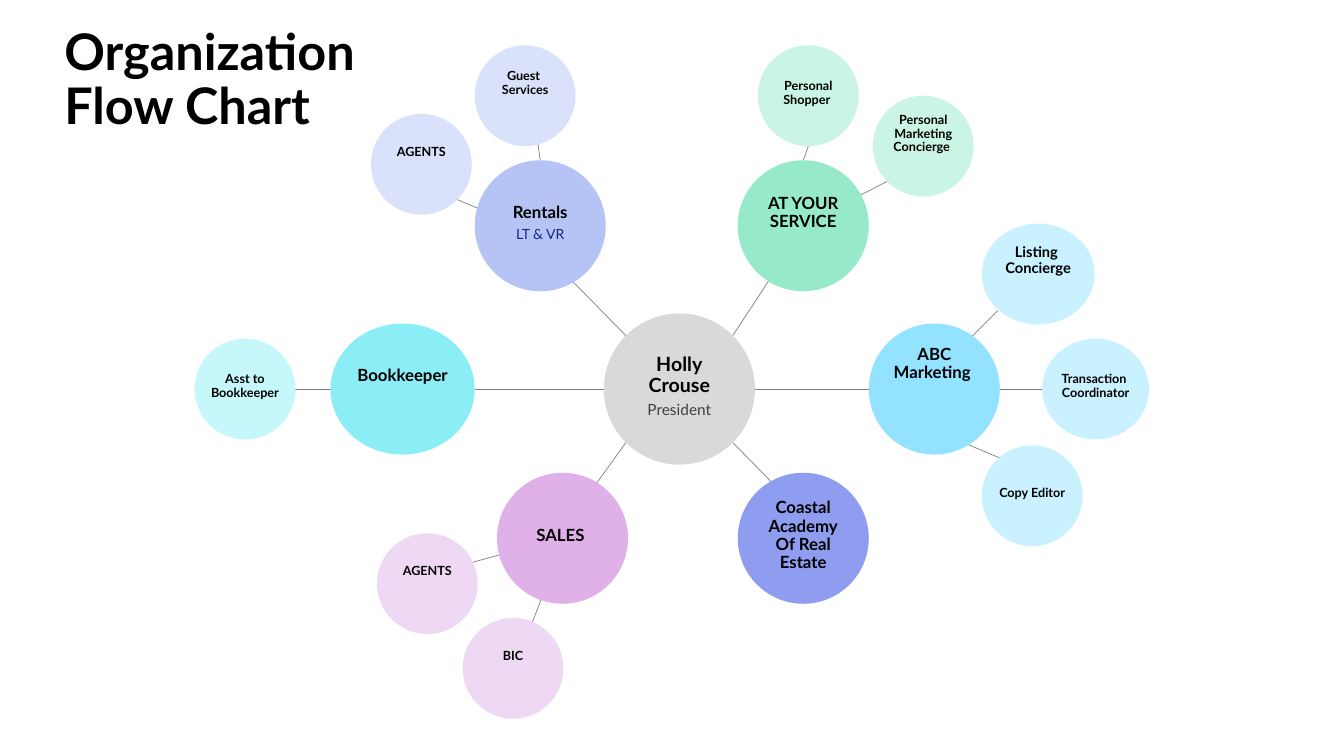
import pptx
import pptx.util
import pptx.dml.color
import pptx.enum.shapes
import pptx.enum.text
import pptx.oxml.ns
import lxml.etree

Pt = pptx.util.Pt

COLOURS = {
    "ink": "000000", "line": "808080", "role": "404040", "rental_note": "132A84",
    "president": "D9D9D9",
    "sales": "E0B1E9", "sales_team": "EFD8F4",
    "rentals": "B6C3F5", "rentals_team": "DAE1FA",
    "service": "96EACA", "service_team": "CAF5E5",
    "books": "8BEEF6", "books_team": "C5F7FB",
    "academy": "8E9DEF",
    "marketing": "93E2FF", "marketing_team": "C9F1FF",
}
FONT = "Lato"
HUB, BRANCH, TEAM = 108, 93.6, 72
MIDDLE = 277.9
BASE_INSET = 4.3

TITLE = "Organization\nFlow Chart"

# (from x, from y, to x, to y)
LINKS = [
    (447.1, 239.8, 406.1, 198), (523.4, 239.8, 552.2, 195.8),
    (539.3, MIDDLE, 620.6, MIDDLE), (431.3, MIDDLE, 339.1, MIDDLE),
    (447.1, 316.1, 417.6, 357.1), (523.4, 316.1, 559.4, 352.8),
    (714.2, MIDDLE, 753.1, MIDDLE), (573.8, 114.5, 577.4, 104.4),
    (612.7, 140.4, 633.6, 129.6), (385.9, 114.5, 383, 93.6),
    (347, 151.2, 309.6, 135.4), (245.5, MIDDLE, 198.7, MIDDLE),
    (362.9, 394.6, 316.8, 407.5), (391, 416.9, 373, 463),
    (712.8, 221.8, 688.3, 246.2), (718.6, 329, 681.1, 313.2),
]

# (colour, centre x, centre y, width, height, text size, extra bottom inset, name)
CIRCLES = [
    ("president", 485.3, MIDDLE, HUB, HUB, 14, 0, "Holly\nCrouse"),
    ("sales", 401.8, 384.5, BRANCH, BRANCH, 12, 0, "SALES "),
    ("rentals", 385.9, 161.3, BRANCH, BRANCH, 12, 0, "Rentals"),
    ("service", 573.8, 161.3, BRANCH, BRANCH, 12, 15, "AT YOUR\nSERVICE"),
    ("books", 287.6, MIDDLE, 103, BRANCH, 12, 15, "Bookkeeper"),
    ("academy", 573.8, 384.5, BRANCH, BRANCH, 12, 0, "Coastal\nAcademy\nOf Real\nEstate"),
    ("marketing", 667.4, MIDDLE, BRANCH, BRANCH, 12, 32, "ABC\nMarketing "),
    ("rentals_team", 375.1, 68.4, TEAM, TEAM, 9, 13.5, "Guest \nServices"),
    ("rentals_team", 301, 117.4, TEAM, TEAM, 9, 13.5, "AGENTS"),
    ("marketing_team", 782.6, MIDDLE, 76.3, TEAM, 9, 0, "Transaction \nCoordinator"),
    ("service_team", 577.4, 68.4, TEAM, TEAM, 9, 0, "Personal\nShopper "),
    ("service_team", 659.5, 104.4, TEAM, TEAM, 9, 13.5, "Personal\nMarketing\nConcierge "),
    ("sales_team", 305.3, 416.9, TEAM, TEAM, 9, 13.5, "AGENTS"),
    ("sales_team", 366.5, 477.4, TEAM, TEAM, 9, 13.5, "BIC"),
    ("books_team", 175, MIDDLE, TEAM, TEAM, 9, 0, "Asst to\nBookkeeper"),
    ("marketing_team", 741.6, 195.8, 80.6, TEAM, 10.5, 15.7, "Listing \nConcierge"),
    ("marketing_team", 737.3, 354.2, TEAM, TEAM, 9, 0, "Copy Editor"),
]

SUBTITLES = {"president": ("President", 11, "role"), "rentals": ("LT & VR", 10, "rental_note")}


def rgb(name):
    return pptx.dml.color.RGBColor.from_string(COLOURS[name])


def write(para, text, size, colour="ink", bold=True, align="CENTER", after=0):
    para.alignment = getattr(pptx.enum.text.PP_ALIGN, align)
    para.line_spacing = 0.9
    para.space_after = Pt(after)
    for index, line in enumerate(text.split("\n")):
        if index:
            para.add_line_break()
        span = para.add_run()
        span.text = line
        span.font.name = FONT
        span.font.size = Pt(size)
        span.font.bold = bold
        span.font.color.rgb = rgb(colour)


def add_link(page, ends):
    link = page.shapes.add_connector(
        pptx.enum.shapes.MSO_CONNECTOR.STRAIGHT, *[Pt(value) for value in ends])
    link.line.color.rgb = rgb("line")
    link.line.width = Pt(0.5)
    lxml.etree.SubElement(link._element.spPr, pptx.oxml.ns.qn("a:effectLst"))


def add_circle(page, colour, x, y, width, height, size, lift, name):
    circle = page.shapes.add_shape(
        pptx.enum.shapes.MSO_SHAPE.OVAL,
        Pt(x - width / 2), Pt(y - height / 2), Pt(width), Pt(height))
    circle.shadow.inherit = False
    circle.fill.solid()
    circle.fill.fore_color.rgb = rgb(colour)
    circle.line.fill.background()
    frame = circle.text_frame
    frame.word_wrap = True
    frame.vertical_anchor = pptx.enum.text.MSO_ANCHOR.MIDDLE
    frame.margin_left = frame.margin_right = frame.margin_top = Pt(0.7)
    frame.margin_bottom = Pt(BASE_INSET + lift)
    subtitle = SUBTITLES.get(colour)
    write(frame.paragraphs[0], name, size, after=4 if subtitle else 0)
    if subtitle:
        text, small, tint = subtitle
        write(frame.add_paragraph(), text, small, colour=tint, bold=False)


def main():
    deck = pptx.Presentation()
    deck.slide_width, deck.slide_height = Pt(960), Pt(540)
    page = deck.slides.add_slide(deck.slide_layouts[6])
    for ends in LINKS:
        add_link(page, ends)
    for circle in CIRCLES:
        add_circle(page, *circle)
    box = page.shapes.add_textbox(Pt(38.9), Pt(24.5), Pt(229.7), Pt(67))
    box.text_frame.word_wrap = True
    box.text_frame.vertical_anchor = pptx.enum.text.MSO_ANCHOR.MIDDLE
    write(box.text_frame.paragraphs[0], TITLE, 36, align="LEFT")
    deck.save("out.pptx")


if __name__ == "__main__":
    main()
